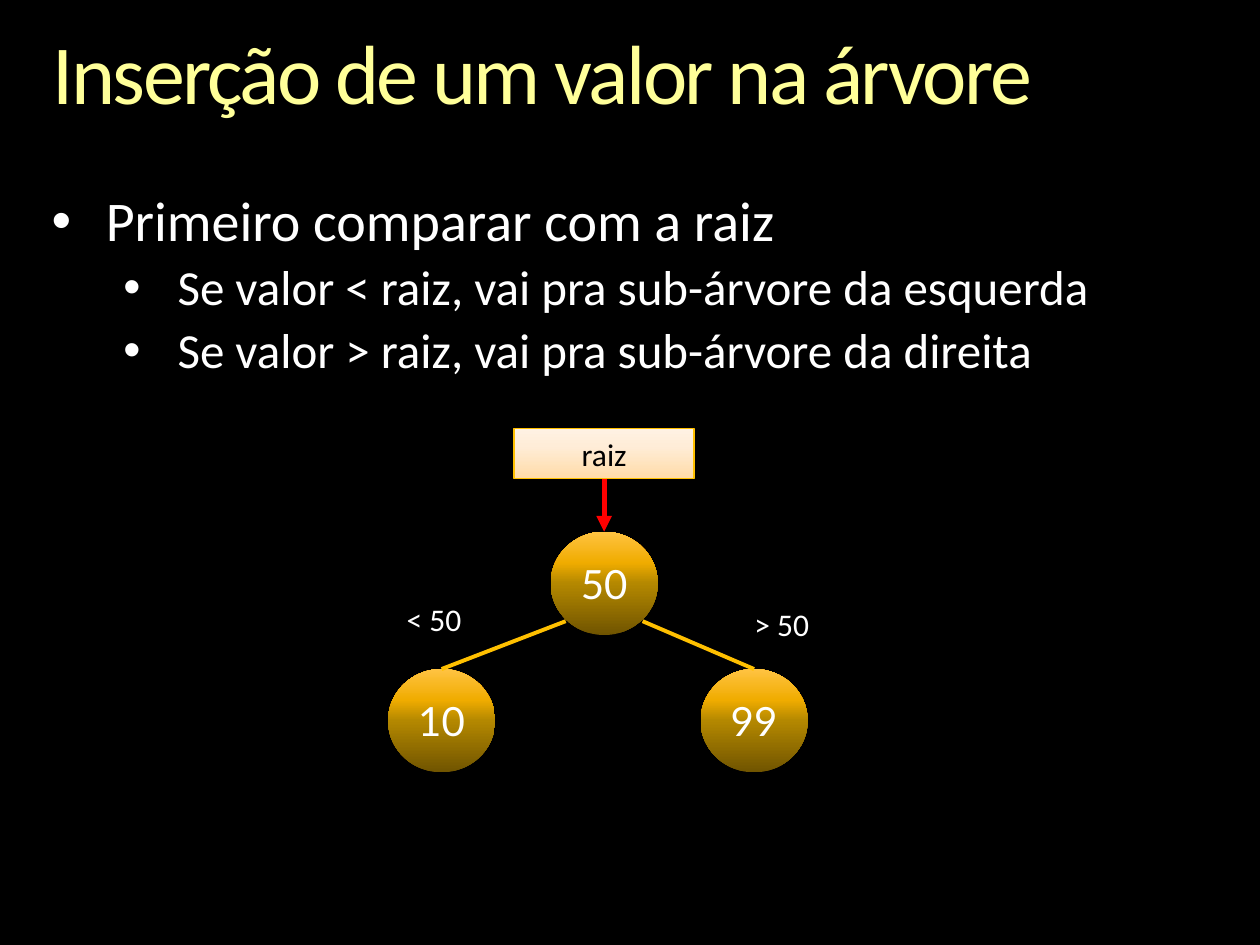
"""Build a slide on inserting a value into a binary search tree."""
import lxml.etree
import pptx
import pptx.dml.color
import pptx.enum.shapes
import pptx.enum.text
import pptx.oxml.ns
import pptx.util

Inches = pptx.util.Inches
SHAPE = pptx.enum.shapes.MSO_SHAPE
CENTER = pptx.enum.text.PP_ALIGN.CENTER
NODE_WIDTH, NODE_HEIGHT = 0.85, 0.82
NODE_STOPS = [(0, "705400"), (50, "B48800"), (70, "F0AC00"), (100, "FFC342")]
ROOT_LABEL_STOPS = [(0, "FFDBA7"), (65, "FFEDD8"), (100, "FFF2E4")]


def rgb(value):
    """Turn a hex string into a colour."""
    return pptx.dml.color.RGBColor.from_string(value)


def add_element(parent, tag, **attributes):
    """Append a DrawingML element with attributes."""
    element = lxml.etree.SubElement(parent, pptx.oxml.ns.qn(tag))
    for name, value in attributes.items():
        element.set(name, str(value))
    return element


def apply_format(target, values):
    """Set each attribute named in a dict of format values."""
    for name, value in values.items():
        setattr(target, name, value)


def write_paragraph(paragraph, text, size, color, font="Calibri", **layout):
    """Write one run of formatted text into a paragraph."""
    run = paragraph.add_run()
    run.text = text
    apply_format(run.font, {"size": pptx.util.Pt(size), "name": font})
    run.font.color.rgb = rgb(color)
    apply_format(paragraph, layout)
    return run


def add_text_box(slide, left, top, width, height, margins=None):
    """Add a wrapping text box, with equal margins if given."""
    frame = slide.shapes.add_textbox(
        Inches(left), Inches(top), Inches(width), Inches(height)).text_frame
    frame.word_wrap = True
    if margins is not None:
        sides = ("left", "top", "right", "bottom")
        apply_format(frame, {f"margin_{side}": Inches(margins) for side in sides})
    return frame


def add_title(slide, text):
    """Add the slide title with tightened letter spacing."""
    frame = add_text_box(slide, 0.42, 0.25, 9.17, 0.73, margins=0)
    run = write_paragraph(frame.paragraphs[0], text, 48, "FFFF99", line_spacing=0.9)
    run.font._element.set("spc", "-150")


def add_bullets(slide, items):
    """Add the bulleted rules, given as level and text."""
    frame = add_text_box(slide, 0.41, 1.53, 9.17, 1.52, margins=0)
    for index, (level, text) in enumerate(items):
        paragraph = frame.paragraphs[0] if index == 0 else frame.add_paragraph()
        layout = {"level": level, "line_spacing": 0.9}
        size = 28 if level else 32
        if index:
            layout["space_before"] = pptx.util.Pt(0.2 * size)
        write_paragraph(paragraph, text, size, "FFFFFF", **layout)
        properties = paragraph._p.get_or_add_pPr()
        properties.set("marL", str(Inches(1 if level else 0.43)))
        properties.set("indent", str(Inches(-0.43)))
        add_element(properties, "a:buFont", typeface="Arial")
        add_element(properties, "a:buChar", char="•")


def add_gradient_shape(slide, kind, left, top, width, height, stops):
    """Add a shape filled with a vertical gradient, listed from the bottom up."""
    shape = slide.shapes.add_shape(
        kind, Inches(left), Inches(top), Inches(width), Inches(height))
    shape.shadow.inherit = False
    shape.fill.gradient()
    gradient = shape._element.spPr.find(pptx.oxml.ns.qn("a:gradFill"))
    for child in list(gradient):
        gradient.remove(child)
    stop_list = add_element(gradient, "a:gsLst")
    for position, color in stops:
        stop = add_element(stop_list, "a:gs", pos=position * 1000)
        add_element(stop, "a:srgbClr", val=color)
    add_element(gradient, "a:lin", ang=270 * 60000, scaled=0)
    return shape


def add_node(slide, left, top, value):
    """Add a tree node showing its value."""
    node = add_gradient_shape(
        slide, SHAPE.OVAL, left, top, NODE_WIDTH, NODE_HEIGHT, NODE_STOPS)
    node.line.fill.background()
    node.text_frame.vertical_anchor = pptx.enum.text.MSO_ANCHOR.MIDDLE
    write_paragraph(node.text_frame.paragraphs[0], value, 23, "FFFFFF", "Lato",
                    alignment=CENTER)
    return node


def add_root_label(slide, text):
    """Add the box that names the root."""
    label = add_gradient_shape(
        slide, SHAPE.RECTANGLE, 4.08, 3.4, 1.43, 0.4, ROOT_LABEL_STOPS)
    label.line.color.rgb = rgb("FFC000")
    label.line.width = pptx.util.Pt(0.75)
    write_paragraph(label.text_frame.paragraphs[0], text, 18, "000000",
                    alignment=CENTER)
    return label


def add_line(slide, start, child, color, width):
    """Add a straight line from a point to the top of a node."""
    x, y = (Inches(value) for value in start)
    line = slide.shapes.add_connector(
        pptx.enum.shapes.MSO_CONNECTOR.STRAIGHT, x, y, x, y)
    line.end_connect(child, 0)
    line.line.color.rgb = rgb(color)
    line.line.width = pptx.util.Pt(width)
    add_element(line._element.spPr, "a:effectLst")
    return line


def add_condition(slide, left, top, text):
    """Add the condition beside a branch."""
    frame = add_text_box(slide, left, top, 0.77, 0.4)
    write_paragraph(frame.paragraphs[0], text, 18, "FFFFFF", alignment=CENTER)


def main():
    """Build and save the slide."""
    presentation = pptx.Presentation()
    apply_format(presentation, {"slide_width": Inches(10), "slide_height": Inches(7.5)})
    slide = presentation.slides.add_slide(presentation.slide_layouts[6])
    slide.background.fill.solid()
    slide.background.fill.fore_color.rgb = rgb("000000")

    add_title(slide, "Inserção de um valor na árvore")
    add_bullets(slide, [
        (0, "Primeiro comparar com a raiz"),
        (1, "Se valor < raiz, vai pra sub-árvore da esquerda"),
        (1, "Se valor > raiz, vai pra sub-árvore da direita"),
    ])

    root = add_node(slide, 4.37, 4.22, "50")
    smaller = add_node(slide, 3.08, 5.31, "10")
    larger = add_node(slide, 5.56, 5.31, "99")
    add_line(slide, (4.49, 4.93), smaller, "FFC000", 2.25)
    add_line(slide, (5.1, 4.93), larger, "FFC000", 2.25)
    add_condition(slide, 5.82, 4.75, "> 50")
    add_condition(slide, 3.06, 4.71, "< 50")

    root_label = add_root_label(slide, "raiz")
    pointer = add_line(slide, (4.79, 3.8), root, "FF0000", 3)
    pointer.begin_connect(root_label, 2)
    add_element(pointer.line._get_or_add_ln(), "a:tailEnd", type="triangle")

    presentation.save("out.pptx")


if __name__ == "__main__":
    main()
